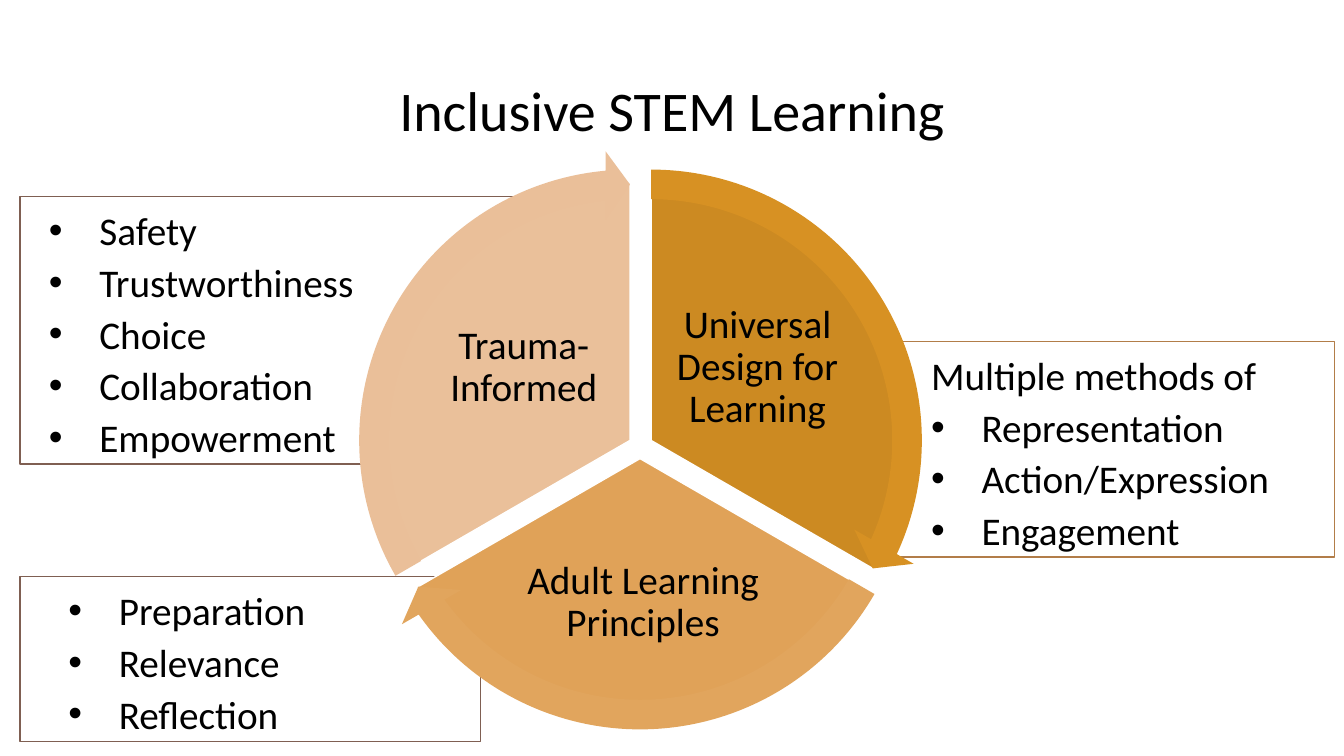
"""Build the Inclusive STEM Learning slide: a three-part cycle with detail boxes."""
from pptx import Presentation
from pptx.dml.color import RGBColor
from pptx.enum import shapes, text
from pptx.oxml import parse_xml
from pptx.oxml.ns import nsdecls
from pptx.util import Pt

BLACK = RGBColor(0x00, 0x00, 0x00)
WHITE = RGBColor(0xFF, 0xFF, 0xFF)
TAN = RGBColor(0xB2, 0x7D, 0x49)
BROWN = RGBColor(0x7F, 0x5F, 0x52)
GOLD = RGBColor(0xCC, 0x8A, 0x22)
GOLD_ARROW = RGBColor(0xD7, 0x91, 0x23)
ORANGE = RGBColor(0xE0, 0xA2, 0x58)
ORANGE_ARROW = RGBColor(0xE1, 0xA5, 0x5D)
PEACH = RGBColor(0xEA, 0xC0, 0x9A)
PEACH_ARROW = RGBColor(0xEA, 0xBF, 0x99)

PIE_SIZE = 368.6
ARROW_MARGIN = 23


def write(shape, lines, size, spacing, alignment):
    frame = shape.text_frame
    frame.word_wrap = True
    frame.text = "\n".join(lines)
    for para in frame.paragraphs:
        para.line_spacing = spacing
        para.alignment = alignment
        para.space_before = Pt(0)
        font = para.runs[0].font
        font.name, font.size, font.color.rgb = "Calibri", Pt(size), BLACK
    return frame


def add_filled(preset, left, top, width, height, color):
    shape = page.shapes.add_shape(preset, Pt(left), Pt(top), Pt(width), Pt(height))
    shape.shadow.inherit = False
    shape.fill.solid()
    shape.fill.fore_color.rgb = color
    return shape


deck = Presentation()
deck.slide_width, deck.slide_height = Pt(960), Pt(540)
page = deck.slides.add_slide(deck.slide_layouts[5])

detail_boxes = [
    (613.5, 244, 340, 154, TAN, 80.6, "Multiple methods of",
     ["Representation", "Action/Expression", "Engagement"]),
    (14.4, 412, 329, 117.5, BROWN, 63.4, None,
     ["Preparation", "Relevance", "Reflection"]),
    (14.4, 140.5, 402.5, 191, BROWN, 49.5, None,
     ["Safety", "Trustworthiness", "Choice", "Collaboration", "Empowerment"]),
]
for left, top, width, height, color, margin, heading, items in detail_boxes:
    box = add_filled(shapes.MSO_SHAPE.RECTANGLE, left, top, width, height, WHITE)
    box.line.color.rgb, box.line.width = color, Pt(1)
    lines = [heading] + items if heading else items
    frame = write(box, lines, 28, 1.1, text.PP_ALIGN.LEFT)
    frame.vertical_anchor = text.MSO_ANCHOR.TOP
    frame.auto_size = text.MSO_AUTO_SIZE.SHAPE_TO_FIT_TEXT
    for para in frame.paragraphs:
        properties = para._p.get_or_add_pPr()
        if para.text == heading:
            properties.set("marL", str(Pt(margin - 36)))
            continue
        properties.set("marL", str(Pt(margin)))
        properties.set("indent", str(Pt(-36)))
        properties.append(parse_xml(f'<a:buFont {nsdecls("a")} typeface="Arial"/>'))
        properties.append(parse_xml(f'<a:buChar {nsdecls("a")} char="•"/>'))

title = page.shapes.title
title.left, title.top, title.width, title.height = Pt(66), Pt(28.8), Pt(828), Pt(104.4)
frame = write(title, ["Inclusive STEM Learning"], 40, 0.9, text.PP_ALIGN.CENTER)
frame.vertical_anchor = text.MSO_ANCHOR.MIDDLE

sectors = [
    (280.8, 130.3, 162, 18, GOLD, "Universal Design for Learning",
     (475.2, 208.1, 131.8, 109.4), GOLD_ARROW, 14.725, 161.994),
    (272.9, 143.3, 18, 90, ORANGE, "Adult Learning Principles",
     (360.7, 382.3, 197.3, 96.5), ORANGE_ARROW, 86.72, 18.005),
    (265.7, 130.3, 90, 162, PEACH, "Trauma-Informed",
     (308.2, 208.1, 131.8, 109.4), PEACH_ARROW, 158.73, 90),
]
for left, top, start, end, color, label, place, *_ in sectors:
    pie = add_filled(shapes.MSO_SHAPE.PIE, left, top, PIE_SIZE, PIE_SIZE, color)
    pie.adjustments[0], pie.adjustments[1] = start, end
    pie.line.color.rgb, pie.line.width = WHITE, Pt(1)
    box = page.shapes.add_textbox(*map(Pt, place))
    frame = write(box, [label], 28, 0.9, text.PP_ALIGN.CENTER)
    frame.vertical_anchor = text.MSO_ANCHOR.MIDDLE
    frame.margin_left = frame.margin_right = Pt(2.8)
    frame.margin_top = frame.margin_bottom = Pt(2.8)

arrow_size = PIE_SIZE + 2 * ARROW_MARGIN
for left, top, *_, color, head_angle, tail_angle in sectors:
    arrow = add_filled(shapes.MSO_SHAPE.CIRCULAR_ARROW, left - ARROW_MARGIN,
                       top - ARROW_MARGIN, arrow_size, arrow_size, color)
    arrow.line.fill.background()
    for index, value in enumerate([0.051, 3.275, head_angle, tail_angle, 0.059]):
        arrow.adjustments[index] = value

deck.save("out.pptx")
